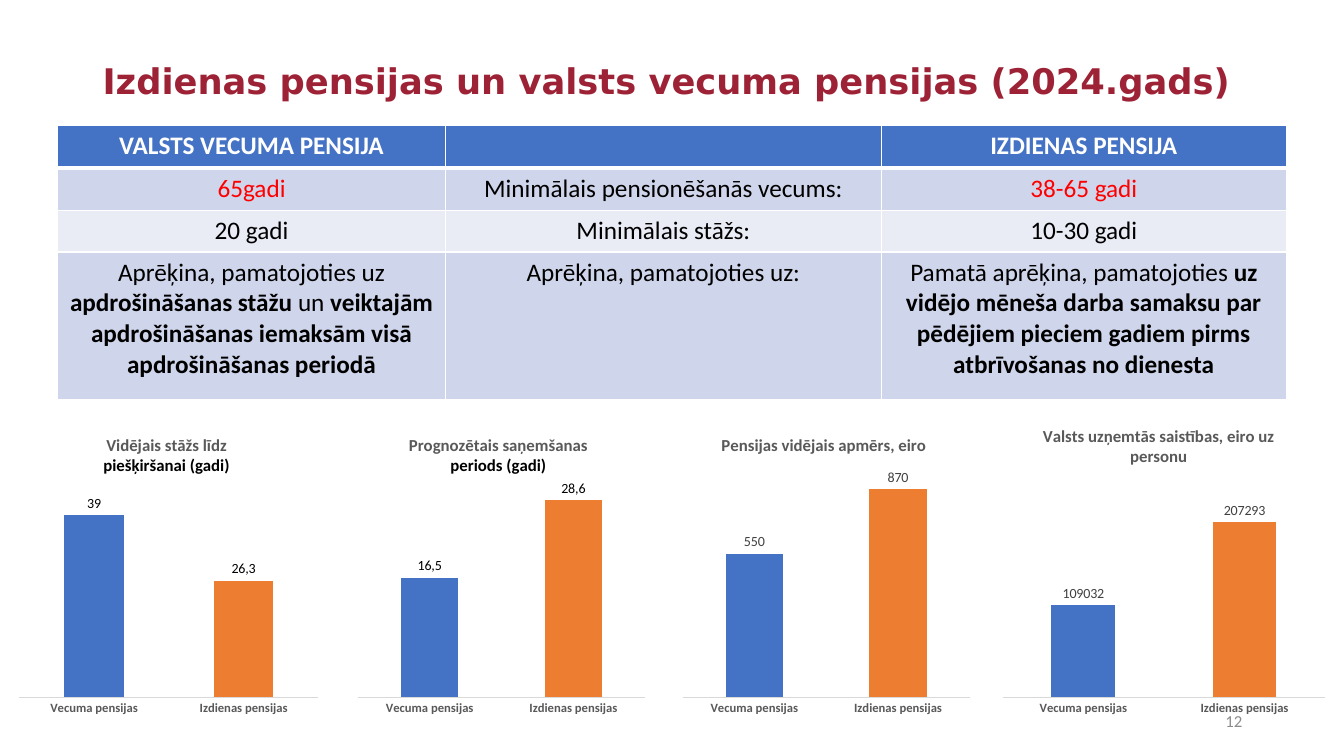
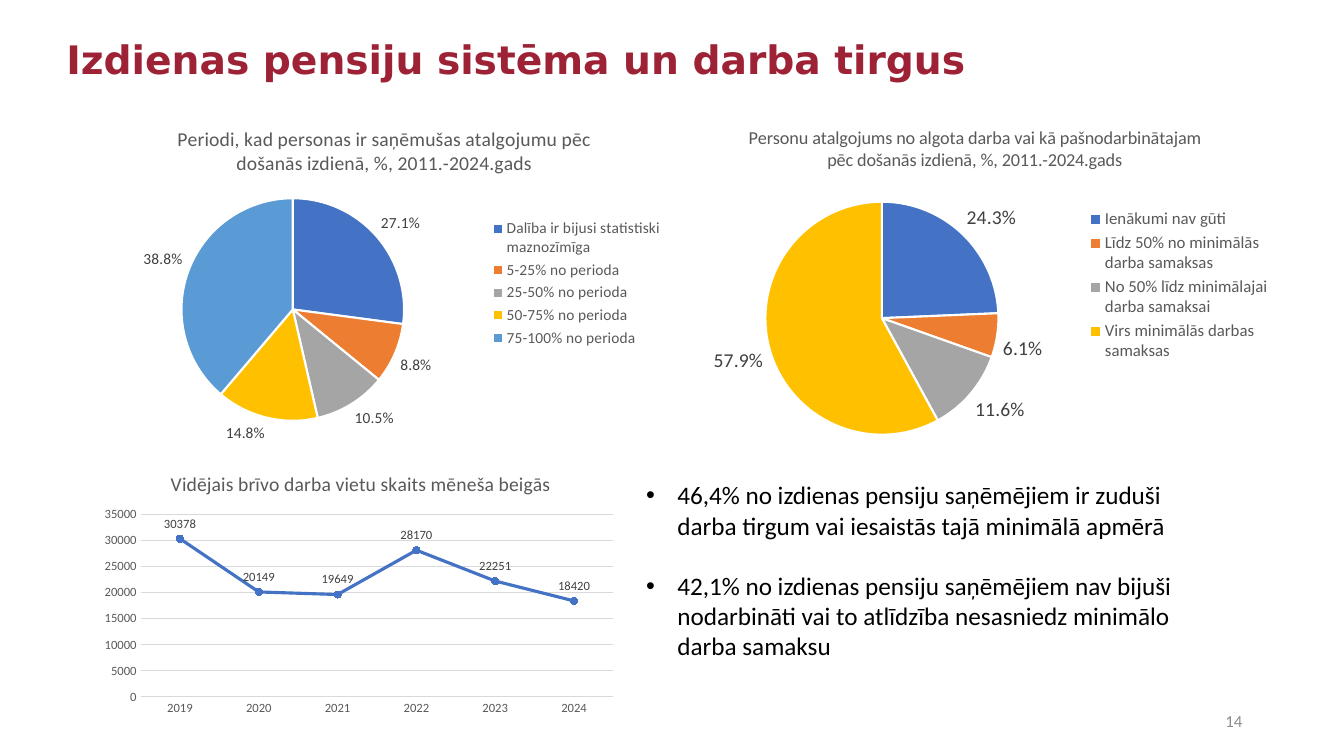
import dataclasses

import lxml.etree
import pptx
import pptx.chart.data
import pptx.dml.color
import pptx.enum.chart
import pptx.enum.text
import pptx.oxml.ns
import pptx.util

Inches = pptx.util.Inches
Pt = pptx.util.Pt
qn = pptx.oxml.ns.qn
Align = pptx.enum.text.PP_ALIGN
Kind = pptx.enum.chart.XL_CHART_TYPE
Spot = pptx.enum.chart.XL_LABEL_POSITION


@dataclasses.dataclass(frozen=True)
class Theme:
    # Fonts and colours
    face: str = "Calibri"
    head: str = "DejaVu Sans"
    wine: str = "9D2235"
    black: str = "000000"
    white: str = "FFFFFF"
    red: str = "FF0000"
    dark: str = "404040"
    gray: str = "595959"
    pale: str = "8C8C8C"
    rule: str = "D9D9D9"
    hues: tuple = ("4472C4", "ED7D31", "A5A5A5", "FFC000", "5B9BD5")
    bands: tuple = ("4472C4", "CFD5EA", "E9EBF5", "CFD5EA")
    # Type sizes
    body: float = 18
    note: float = 12
    label: float = 10
    tick: float = 9


T = Theme()


def rgb(hue):
    return pptx.dml.color.RGBColor.from_string(hue)


def style(font, size, hue, bold=False, face=T.face):
    font.size, font.bold, font.name = Pt(size), bold, face
    font.color.rgb = rgb(hue)


# Text

def add_text(slide, box, lines, size, hue, bold=False, face=T.face, middle=True):
    frame = slide.shapes.add_textbox(*map(Inches, box)).text_frame
    frame.word_wrap = True
    if middle:
        frame.vertical_anchor = pptx.enum.text.MSO_ANCHOR.MIDDLE
    frame.text = "\n".join(lines)
    for para in frame.paragraphs:
        for run in para.runs:
            style(run.font, size, hue, bold, face)
    return frame


def add_title(slide, box, text, size):
    frame = add_text(slide, box, [text], size, T.wine, True, T.head)
    frame.paragraphs[0].line_spacing = 0.9


def add_page(slide, page):
    frame = add_text(slide, (9.42, 6.95, 3, 0.4), [page], T.note, T.pale)
    frame.paragraphs[0].alignment = Align.RIGHT


def add_points(slide, box, lines):
    frame = add_text(slide, box, lines, T.body, T.black, middle=False)
    for para in frame.paragraphs:
        props = para._p.get_or_add_pPr()
        props.set("marL", str(Inches(0.31)))
        props.set("indent", str(-Inches(0.31)))
        lxml.etree.SubElement(props, qn("a:buFont"), typeface="Arial")
        lxml.etree.SubElement(props, qn("a:buChar"), char="•")
    for para in frame.paragraphs[1:]:
        para.space_before = Pt(21.5)


# Table

def add_edge(cell, side, width):
    edge = lxml.etree.SubElement(cell._tc.get_or_add_tcPr(), qn("a:ln" + side),
                                 w=str(Pt(width)))
    fill = lxml.etree.SubElement(edge, qn("a:solidFill"))
    lxml.etree.SubElement(fill, qn("a:srgbClr"), val=T.white)


def fill_cell(cell, parts, row, hue):
    """Parts alternate between plain and bold text."""
    for side in "LRTB":
        thick = (row, side) in ((0, "B"), (1, "T"))
        add_edge(cell, side, 3 if thick else 1)
    cell.fill.solid()
    cell.fill.fore_color.rgb = rgb(T.bands[row])
    para = cell.text_frame.paragraphs[0]
    para.alignment = Align.CENTER
    for i, part in enumerate(parts):
        run = para.add_run()
        run.text = part
        style(run.font, T.body, hue, row == 0 or i % 2 == 1)


def add_table(slide, spot, widths, heights, rows):
    box = (*spot, sum(widths), sum(heights))
    table = slide.shapes.add_table(len(rows), len(widths), *map(Inches, box)).table
    for col, width in zip(table.columns, widths):
        col.width = Inches(width)
    for row, height in zip(table.rows, heights):
        row.height = Inches(height)
    for r, row in enumerate(rows):
        for c, parts in enumerate(row):
            hue = T.white if r == 0 else T.red if r == 1 and c != 1 else T.black
            fill_cell(table.cell(r, c), parts, r, hue)


# Charts

def place(chart, tag, spot):
    """Set the place of a chart part, as shares of the chart's size."""
    part = chart.element.find(".//" + qn(tag))
    for old in part.findall(qn("c:layout")):
        part.remove(old)
    layout = lxml.etree.Element(qn("c:layout"))
    part.insert(0 if tag == "c:plotArea" else 1, layout)
    manual = lxml.etree.SubElement(layout, qn("c:manualLayout"))
    marks = [("xMode", "edge"), ("yMode", "edge"), *zip("xywh", spot)]
    if tag == "c:plotArea":
        marks.insert(0, ("layoutTarget", "inner"))
    for name, val in marks:
        lxml.etree.SubElement(manual, qn("c:" + name), val=str(val))


def add_chart(slide, kind, box, cats, name, vals, title, size, plot, spot, bold=False):
    """Title is a list of (text, colour) lines; spot is its left and top."""
    data = pptx.chart.data.CategoryChartData()
    data.categories = cats
    data.add_series(name, vals)
    chart = slide.shapes.add_chart(kind, *map(Inches, box), data).chart
    style(chart.font, T.label, T.black)
    chart.has_legend = False
    chart.has_title = True
    frame = chart.chart_title.text_frame
    frame.text = "\n".join(text for text, _ in title)
    for para, (_, hue) in zip(frame.paragraphs, title):
        style(para.runs[0].font, size, hue, bold)
    place(chart, "c:plotArea", plot)
    place(chart, "c:title", spot)
    return chart


def add_labels(chart, size, hue, spot, form):
    labels = chart.plots[0].series[0].data_labels
    labels.show_value = True
    labels.position = spot
    labels.number_format, labels.number_format_is_linked = form, False
    style(labels.font, size, hue)


def style_base(axis, bold=False):
    axis.has_major_gridlines = False
    axis.major_tick_mark = pptx.enum.chart.XL_TICK_MARK.NONE
    axis.format.line.color.rgb = rgb(T.rule)
    axis.format.line.width = Pt(0.75)
    style(axis.tick_labels.font, T.tick, T.gray, bold)


def paint(series, hues):
    for i, hue in enumerate(hues):
        fill = series.points[i].format.fill
        fill.solid()
        fill.fore_color.rgb = rgb(hue)


def add_bars(slide, left, width, title, spot, vals, texts, top, hue, gap=150, lap=-25):
    chart = add_chart(slide, Kind.COLUMN_CLUSTERED, (left, 4.15, width, 3.01),
                      ["Vecuma pensijas", "Izdienas pensijas"], "Series 1", vals,
                      title, T.note, (0.02, 0.2, 0.96, 0.72), spot, True)
    style_base(chart.category_axis, True)
    axis = chart.value_axis
    axis.visible = axis.has_major_gridlines = False
    axis.minimum_scale, axis.maximum_scale = 0, top
    plot = chart.plots[0]
    plot.vary_by_categories = False
    plot.gap_width, plot.overlap = gap, lap
    series = plot.series[0]
    series.invert_if_negative = False
    paint(series, T.hues[:2])
    add_labels(chart, T.label, hue, Spot.OUTSIDE_END, "0")
    for i, text in enumerate(texts):
        label = series.points[i].data_label
        label.text_frame.text = text
        style(label.text_frame.paragraphs[0].runs[0].font, T.label, hue)
        label.position = Spot.OUTSIDE_END


def add_pie(slide, box, title, size, spot, parts, plot, key, sizes):
    """Sizes are those of the legend and the labels."""
    chart = add_chart(slide, Kind.PIE, box, list(parts), "Series 1", parts.values(),
                      [(title, T.gray)], size, plot, spot)
    chart.plots[0].vary_by_categories = True
    series = chart.plots[0].series[0]
    paint(series, T.hues[:len(parts)])
    for i in range(len(parts)):
        line = series.points[i].format.line
        line.color.rgb, line.width = rgb(T.white), Pt(1.5)
    chart.has_legend = True
    chart.legend.position = pptx.enum.chart.XL_LEGEND_POSITION.RIGHT
    chart.legend.include_in_layout = False
    style(chart.legend.font, sizes[0], T.gray)
    place(chart, "c:legend", key)
    add_labels(chart, sizes[1], T.dark, Spot.OUTSIDE_END, "0.0%")


def add_line(slide, box, title, years, vals):
    chart = add_chart(slide, Kind.LINE_MARKERS, box, years, title, vals,
                      [(title, T.gray)], 14, (0.09, 0.22, 0.89, 0.69), (0.14, 0.04))
    style_base(chart.category_axis)
    axis = chart.value_axis
    style_base(axis)
    axis.format.line.fill.background()
    axis.has_major_gridlines = True
    grid = axis.major_gridlines.format.line
    grid.color.rgb, grid.width = rgb(T.rule), Pt(0.75)
    axis.minimum_scale, axis.maximum_scale, axis.major_unit = 0, 35000, 5000
    axis.tick_labels.number_format = "0"
    axis.tick_labels.number_format_is_linked = False
    chart.plots[0].vary_by_categories = False
    series = chart.plots[0].series[0]
    series.smooth = False
    hue = rgb(T.hues[0])
    series.format.line.color.rgb, series.format.line.width = hue, Pt(2.25)
    mark = series.marker
    mark.style, mark.size = pptx.enum.chart.XL_MARKER_STYLE.CIRCLE, 5
    mark.format.fill.solid()
    mark.format.fill.fore_color.rgb = mark.format.line.color.rgb = hue
    add_labels(chart, T.tick, T.dark, Spot.ABOVE, "0")


# Slides

def draw_types(slide):
    add_title(slide, (0.92, 0.4, 11.5, 0.85),
              "Izdienas pensijas un valsts vecuma pensijas (2024.gads)", 25.2)
    add_table(slide, (0.57, 1.24), (3.85, 4.32, 4.02), (0.43, 0.42, 0.41, 1.46), [
        [["VALSTS VECUMA PENSIJA"], [], ["IZDIENAS PENSIJA"]],
        [["65gadi"], ["Minimālais pensionēšanās vecums:"], ["38-65 gadi"]],
        [["20 gadi"], ["Minimālais stāžs:"], ["10-30 gadi"]],
        [["Aprēķina, pamatojoties uz ", "apdrošināšanas stāžu ", "un ",
          "veiktajām apdrošināšanas iemaksām visā apdrošināšanas periodā"],
         ["Aprēķina, pamatojoties uz:"],
         ["Pamatā aprēķina, pamatojoties ", "uz vidējo mēneša darba samaksu par "
          "pēdējiem pieciem gadiem pirms atbrīvošanas no dienesta"]],
    ])
    add_bars(slide, 0.13, 3.09,
             [("Vidējais stāžs līdz", T.gray), ("piešķiršanai (gadi)", T.black)],
             (0.28, 0.04), (39, 25), ("39", "26,3"), 46.8, T.black)
    add_bars(slide, 3.49, 2.97,
             [("Prognozētais saņemšanas", T.gray), ("periods (gadi)", T.black)],
             (0.18, 0.04), (17, 28), ("16,5", "28,6"), 31, T.black)
    add_bars(slide, 6.71, 2.97, [("Pensijas vidējais apmērs, eiro", T.gray)],
             (0.14, 0.04), (435, 630), ("550", "870"), 661, T.dark)
    add_bars(slide, 9.88, 3.33, [("Valsts uzņemtās saistības, eiro uz personu", T.gray)],
             (0.13, 0.01), (109032, 207293), (), 258700, T.dark, 152, -27)
    add_page(slide, "12")


def draw_market(slide):
    add_title(slide, (0.56, 0.15, 11.5, 0.92),
              "Izdienas pensiju sistēma un darba tirgus", 28)
    add_pie(slide, (0.92, 1.07, 5.75, 3.45),
            "Periodi, kad personas ir saņēmušas atalgojumu pēc došanās izdienā, %, "
            "2011.-2024.gads", 14, (0.14, 0.04),
            {"Dalība ir bijusi statistiski maznozīmīga": 0.271,
             "5-25% no perioda": 0.088, "25-50% no perioda": 0.105,
             "50-75% no perioda": 0.148, "75-100% no perioda": 0.388},
            (0.15, 0.26, 0.39, 0.64), (0.68, 0.31, 0.31, 0.39), (11, 11))
    add_pie(slide, (6.67, 1.07, 6.02, 3.45),
            "Personu atalgojums no algota darba vai kā pašnodarbinātajam pēc došanās "
            "izdienā, %, 2011.-2024.gads", 13, (0.12, 0.04),
            {"Ienākumi nav gūti": 0.243,
             "Līdz 50% no minimālās darba samaksas": 0.061,
             "No 50% līdz minimālajai darba samaksai": 0.116,
             "Virs minimālās darbas samaksas": 0.579},
            (0.15, 0.27, 0.39, 0.67), (0.68, 0.28, 0.31, 0.46), (12, 14))
    add_line(slide, (0.92, 4.53, 5.27, 2.62),
             "Vidējais brīvo darba vietu skaits mēneša beigās",
             [str(year) for year in range(2019, 2025)],
             (30378, 20149, 19649, 28170, 22251, 18420))
    add_points(slide, (6.31, 4.71, 5.86, 1.92), [
        "46,4% no izdienas pensiju saņēmējiem ir zuduši darba tirgum vai iesaistās "
        "tajā minimālā apmērā",
        "42,1% no izdienas pensiju saņēmējiem nav bijuši nodarbināti vai to atlīdzība "
        "nesasniedz minimālo darba samaksu"])
    add_page(slide, "14")


def main():
    deck = pptx.Presentation()
    deck.slide_width, deck.slide_height = Inches(13.33), Inches(7.5)
    for draw in (draw_types, draw_market):
        draw(deck.slides.add_slide(deck.slide_layouts[6]))
    deck.save("out.pptx")


if __name__ == "__main__":
    main()
